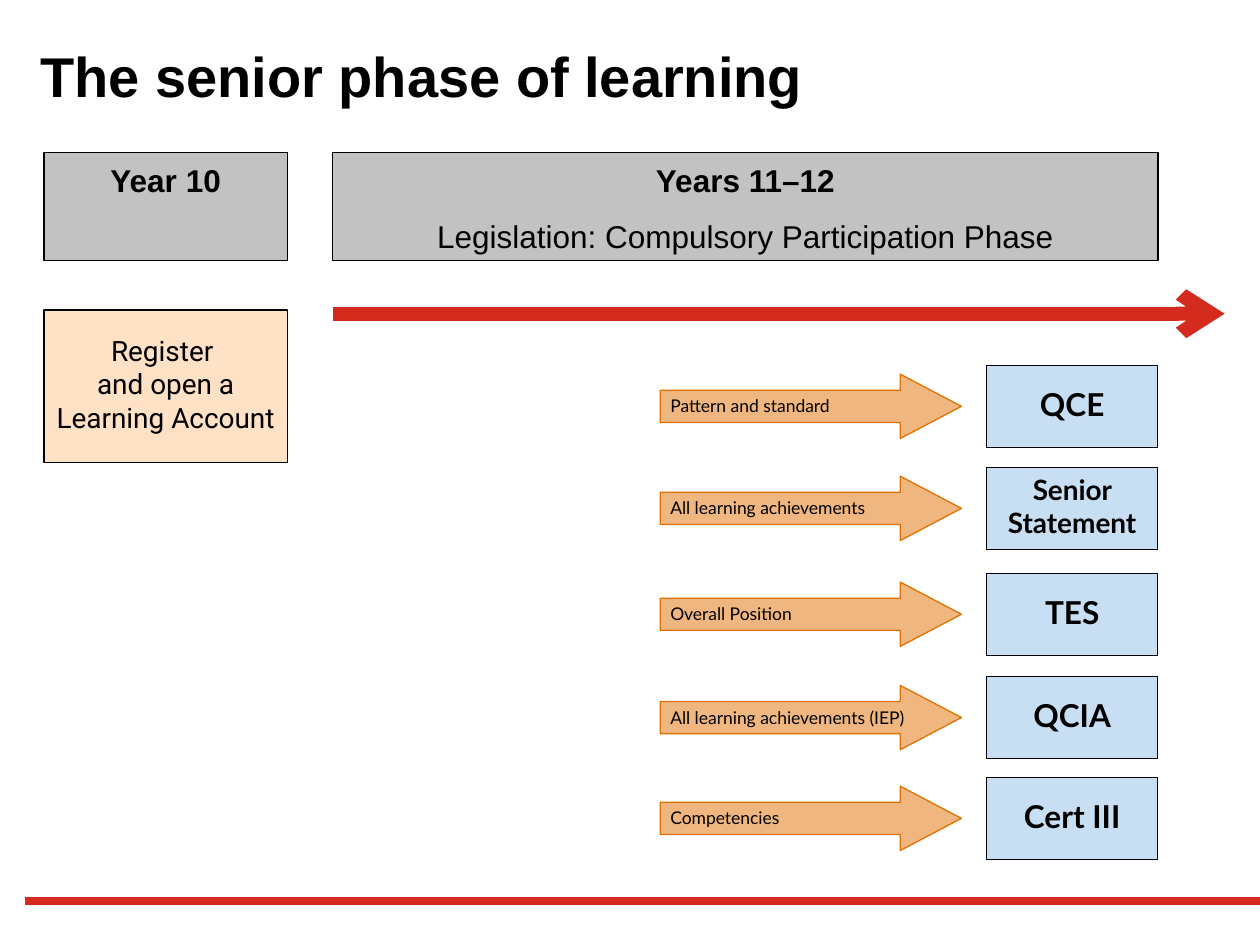
from dataclasses import dataclass
from typing import Optional

from lxml.etree import SubElement
from pptx import Presentation
from pptx.dml.color import RGBColor
from pptx.enum.shapes import MSO_CONNECTOR, MSO_SHAPE
from pptx.enum.text import MSO_ANCHOR, PP_ALIGN
from pptx.oxml.ns import qn
from pptx.util import Inches, Pt

BLACK = RGBColor(0x00, 0x00, 0x00)
RED = RGBColor(0xD5, 0x2B, 0x1E)
GREY = RGBColor(0xB5, 0xB5, 0xB5)
PEACH = RGBColor(0xFF, 0xE2, 0xC6)
ORANGE = RGBColor(0xE1, 0x70, 0x00)
BLUE = RGBColor(0xC8, 0xDE, 0xF2)

YEAR_10_LEFT, YEAR_10_WIDTH = 0.35, 1.93
YEARS_11_12_LEFT, YEARS_11_12_WIDTH = 2.64, 6.55
HEADER_TOP, HEADER_HEIGHT = 1.21, 0.86
ARROW_LEFT, ARROW_WIDTH, ARROW_HEIGHT = 5.24, 2.39, 0.51
RESULT_LEFT, RESULT_WIDTH, RESULT_HEIGHT = 7.83, 1.36, 0.65


@dataclass(frozen=True)
class TextStyle:
    font: str
    size: int
    bold: bool = False
    align: PP_ALIGN = PP_ALIGN.CENTER
    anchor: MSO_ANCHOR = MSO_ANCHOR.MIDDLE
    # left, top, right, bottom
    insets: tuple[float, float, float, float] = (0.08, 0.04, 0.08, 0.08)


@dataclass(frozen=True)
class BoxStyle:
    fill: RGBColor
    line: RGBColor = BLACK
    opacity: Optional[int] = None
    preset: MSO_SHAPE = MSO_SHAPE.RECTANGLE


@dataclass(frozen=True)
class Pathway:
    evidence: str
    result: str
    top: float
    result_size: int = 18


TITLE_TEXT = TextStyle("Arial", 32, True, PP_ALIGN.LEFT, MSO_ANCHOR.TOP, (0, 0.05, 0, 0))
HEADER_TEXT = TextStyle("Arial", 18, True, anchor=MSO_ANCHOR.TOP, insets=(0.1, 0.07, 0.1, 0.05))
REGISTER_TEXT = TextStyle("Roboto", 16)
EVIDENCE_TEXT = TextStyle("Lato", 10, align=PP_ALIGN.LEFT, anchor=MSO_ANCHOR.TOP,
                          insets=(0.08, 0.04, 0.08, 0.04))

HEADER_BOX = BoxStyle(GREY, opacity=81)
REGISTER_BOX = BoxStyle(PEACH)
EVIDENCE_ARROW = BoxStyle(ORANGE, ORANGE, 50, MSO_SHAPE.RIGHT_ARROW)
RESULT_BOX = BoxStyle(BLUE)

PATHWAYS = [
    Pathway("Pattern and standard", "QCE", 2.9),
    Pathway("All learning achievements", "Senior Statement", 3.71, 16),
    Pathway("Overall Position", "TES", 4.55),
    Pathway("All learning achievements (IEP)", "QCIA", 5.37),
    Pathway("Competencies", "Cert III", 6.17),
]


def write_text(shape, paragraphs: list[str], style: TextStyle) -> None:
    """Fill the shape; only the first paragraph takes the style's bold."""
    frame = shape.text_frame
    frame.word_wrap = True
    frame.vertical_anchor = style.anchor
    frame.margin_left, frame.margin_top, frame.margin_right, frame.margin_bottom = (
        Inches(inset) for inset in style.insets)
    frame.text = "\n".join(paragraphs)
    for index, paragraph in enumerate(frame.paragraphs):
        paragraph.alignment = style.align
        if index:
            paragraph.space_before = Pt(style.size * 0.56)
        for run in paragraph.runs:
            run.font.name = style.font
            run.font.size = Pt(style.size)
            run.font.bold = style.bold and index == 0
            run.font.color.rgb = BLACK


def add_box(slide, left: float, top: float, width: float, height: float,
            paragraphs: list[str], box: BoxStyle, text: TextStyle):
    shape = slide.shapes.add_shape(box.preset, Inches(left), Inches(top),
                                   Inches(width), Inches(height))
    shape.shadow.inherit = False
    shape.fill.solid()
    shape.fill.fore_color.rgb = box.fill
    if box.opacity is not None:
        colour = shape.fill._xPr.find(qn("a:solidFill"))[0]
        SubElement(colour, qn("a:alpha")).set("val", str(box.opacity * 1000))
    shape.line.color.rgb = box.line
    shape.line.width = Pt(0.75)
    write_text(shape, paragraphs, text)
    return shape


def add_red_line(slide, left: float, right: float, y: float, weight: float,
                 arrow: bool = False) -> None:
    line = slide.shapes.add_connector(MSO_CONNECTOR.STRAIGHT, Inches(left), Inches(y),
                                      Inches(right), Inches(y))
    line.line.color.rgb = RED
    line.line.width = Pt(weight)
    if arrow:
        SubElement(line.line._get_or_add_ln(), qn("a:tailEnd")).set("type", "arrow")
    SubElement(line._element.spPr, qn("a:effectLst"))


def add_pathway(slide, pathway: Pathway) -> None:
    arrow_top = pathway.top + (RESULT_HEIGHT - ARROW_HEIGHT) / 2
    arrow = add_box(slide, ARROW_LEFT, arrow_top, ARROW_WIDTH, ARROW_HEIGHT,
                    [pathway.evidence], EVIDENCE_ARROW, EVIDENCE_TEXT)
    arrow.adjustments[0] = 0.5
    arrow.adjustments[1] = 0.95
    add_box(slide, RESULT_LEFT, pathway.top, RESULT_WIDTH, RESULT_HEIGHT,
            [pathway.result], RESULT_BOX, TextStyle("Lato", pathway.result_size, True))


def main() -> None:
    presentation = Presentation()
    presentation.slide_width = Inches(10)
    presentation.slide_height = Inches(7.5)
    slide = presentation.slides.add_slide(presentation.slide_layouts[6])

    add_red_line(slide, 0.2, 10, 7.15, 4.2)
    title = slide.shapes.add_textbox(Inches(0.32), Inches(0.28), Inches(9.37), Inches(0.87))
    write_text(title, ["The senior phase of learning"], TITLE_TEXT)

    add_box(slide, YEAR_10_LEFT, HEADER_TOP, YEAR_10_WIDTH, HEADER_HEIGHT,
            ["Year 10"], HEADER_BOX, HEADER_TEXT)
    add_box(slide, YEARS_11_12_LEFT, HEADER_TOP, YEARS_11_12_WIDTH, HEADER_HEIGHT,
            ["Years 11–12", "Legislation: Compulsory Participation Phase"],
            HEADER_BOX, HEADER_TEXT)
    add_box(slide, YEAR_10_LEFT, 2.46, YEAR_10_WIDTH, 1.21,
            ["Register \vand open a Learning Account"], REGISTER_BOX, REGISTER_TEXT)

    add_red_line(slide, YEARS_11_12_LEFT, 9.72, 2.49, 8, arrow=True)
    for pathway in PATHWAYS:
        add_pathway(slide, pathway)

    presentation.save("out.pptx")


if __name__ == "__main__":
    main()
